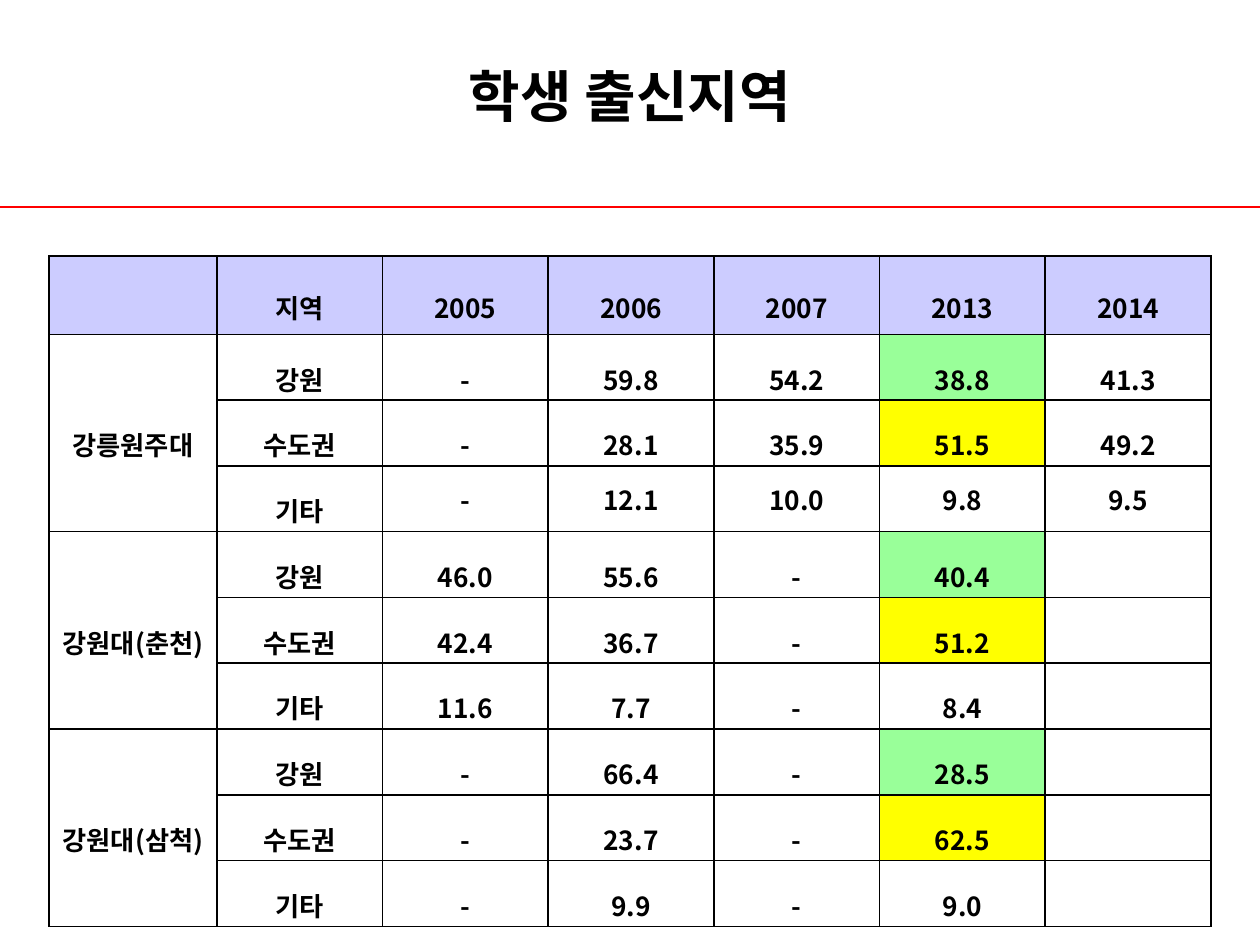
from lxml.etree import SubElement
from pptx import Presentation
from pptx.dml.color import RGBColor
from pptx.enum.shapes import MSO_CONNECTOR as Connector
from pptx.enum.text import MSO_ANCHOR as Anchor, PP_ALIGN as Align
from pptx.oxml.ns import qn
from pptx.util import Cm, Pt

HEADERS = ["", "지역", "2005", "2006", "2007", "2013", "2014"]
UNIVERSITIES = {
    "강릉원주대": [
        ["강원", "-", "59.8", "54.2", "38.8", "41.3"],
        ["수도권", "-", "28.1", "35.9", "51.5", "49.2"],
        ["기타", "-", "12.1", "10.0", "9.8", "9.5"],
    ],
    "강원대(춘천)": [
        ["강원", "46.0", "55.6", "-", "40.4", ""],
        ["수도권", "42.4", "36.7", "-", "51.2", ""],
        ["기타", "11.6", "7.7", "-", "8.4", ""],
    ],
    "강원대(삼척)": [
        ["강원", "-", "66.4", "-", "28.5", ""],
        ["수도권", "-", "23.7", "-", "62.5", ""],
        ["기타", "-", "9.9", "-", "9.0", ""],
    ],
}
HIGHLIGHTS = {"강원": "99FF99", "수도권": "FFFF00"}
HIGHLIGHT_COLUMN = HEADERS.index("2013")


def color(value):
    return RGBColor.from_string(value)


def set_values(target, values):
    for name, value in values.items():
        setattr(target, name, value)


class SlideBuilder:
    font = "Noto Sans CJK KR"
    ink = "000000"
    header_fill = "CCCCFF"
    cell_format = {
        "vertical_anchor": Anchor.MIDDLE,
        "margin_left": Cm(0.18),
        "margin_right": Cm(0.18),
        "margin_top": Cm(0.05),
        "margin_bottom": Cm(0.05),
    }

    def __init__(self, deck):
        self.page = deck.slides.add_slide(deck.slide_layouts[5])

    def label(self, frame, text, size, spacing=None):
        para = frame.paragraphs[0]
        set_values(para, {"alignment": Align.CENTER, "line_spacing": spacing})
        span = para.add_run()
        span.text = text
        set_values(span.font, {"name": self.font, "size": Pt(size), "bold": True})
        span.font.color.rgb = color(self.ink)
        SubElement(span.font._element, qn("a:ea"), typeface=self.font)

    def title(self, text):
        box = self.page.shapes.title
        set_values(box, {"left": Cm(1.27), "top": Cm(0.76),
                         "width": Cm(22.86), "height": Cm(3.18)})
        set_values(box.text_frame, {"vertical_anchor": Anchor.MIDDLE,
                                    "margin_bottom": Cm(1)})
        self.label(box.text_frame, text, 32)

    def rule(self, top, value):
        line = self.page.shapes.add_connector(
            Connector.STRAIGHT, 0, Cm(top), Cm(25.4), Cm(top))
        line.line.color.rgb = color(value)
        line.line.width = Pt(0.75)
        SubElement(line._element.spPr, qn("a:effectLst"))

    def borders(self, cell, visible_sides):
        properties = cell._tc.get_or_add_tcPr()
        for side in "LRTB":
            line = SubElement(properties, qn(f"a:ln{side}"), w=str(Pt(1)))
            if side in visible_sides:
                fill = SubElement(line, qn("a:solidFill"))
                SubElement(fill, qn("a:srgbClr"), val=self.ink)
            else:
                SubElement(line, qn("a:noFill"))

    def cell(self, cell, text="", fill=None, sides="LRTB", spacing=1.6):
        set_values(cell, self.cell_format)
        self.borders(cell, sides)
        if fill:
            cell.fill.solid()
            cell.fill.fore_color.rgb = color(fill)
        else:
            cell.fill.background()
        if text:
            self.label(cell.text_frame, text, 15, spacing)

    def table(self, headers, groups):
        last = len(headers) - 1
        row_count = 2 + sum(len(rows) for rows in groups.values())
        table = self.page.shapes.add_table(
            row_count, len(headers), Cm(0.99), Cm(3.58), Cm(23.42), Cm(15.05)).table
        for index, column in enumerate(table.columns):
            column.width = Cm(3.34 if index else 3.38)
        for index, row in enumerate(table.rows):
            row.height = Cm(1.58 if index < 2 else 1.32)

        for index, header in enumerate(headers):
            self.cell(table.cell(0, index), sides="B")
            self.cell(table.cell(1, index), header, self.header_fill)
        table.cell(0, 0).merge(table.cell(0, last))

        top = 2
        for group, (university, rows) in enumerate(groups.items()):
            for offset, values in enumerate(rows):
                region = values[0]
                name = "" if offset else university
                for index, text in enumerate([name, *values]):
                    fill = HIGHLIGHTS.get(region) if index == HIGHLIGHT_COLUMN else None
                    single = group == 0 and region == "기타" and index > 1
                    self.cell(table.cell(top + offset, index), text, fill,
                              spacing=None if single else 1.6)
            table.cell(top, 0).merge(table.cell(top + len(rows) - 1, 0))
            top += len(rows)


def main():
    deck = Presentation()
    set_values(deck, {"slide_width": Cm(25.4), "slide_height": Cm(19.05)})
    builder = SlideBuilder(deck)
    builder.rule(4.17, "FF0000")
    builder.title("학생 출신지역")
    builder.table(HEADERS, UNIVERSITIES)
    deck.save("out.pptx")


if __name__ == "__main__":
    main()
